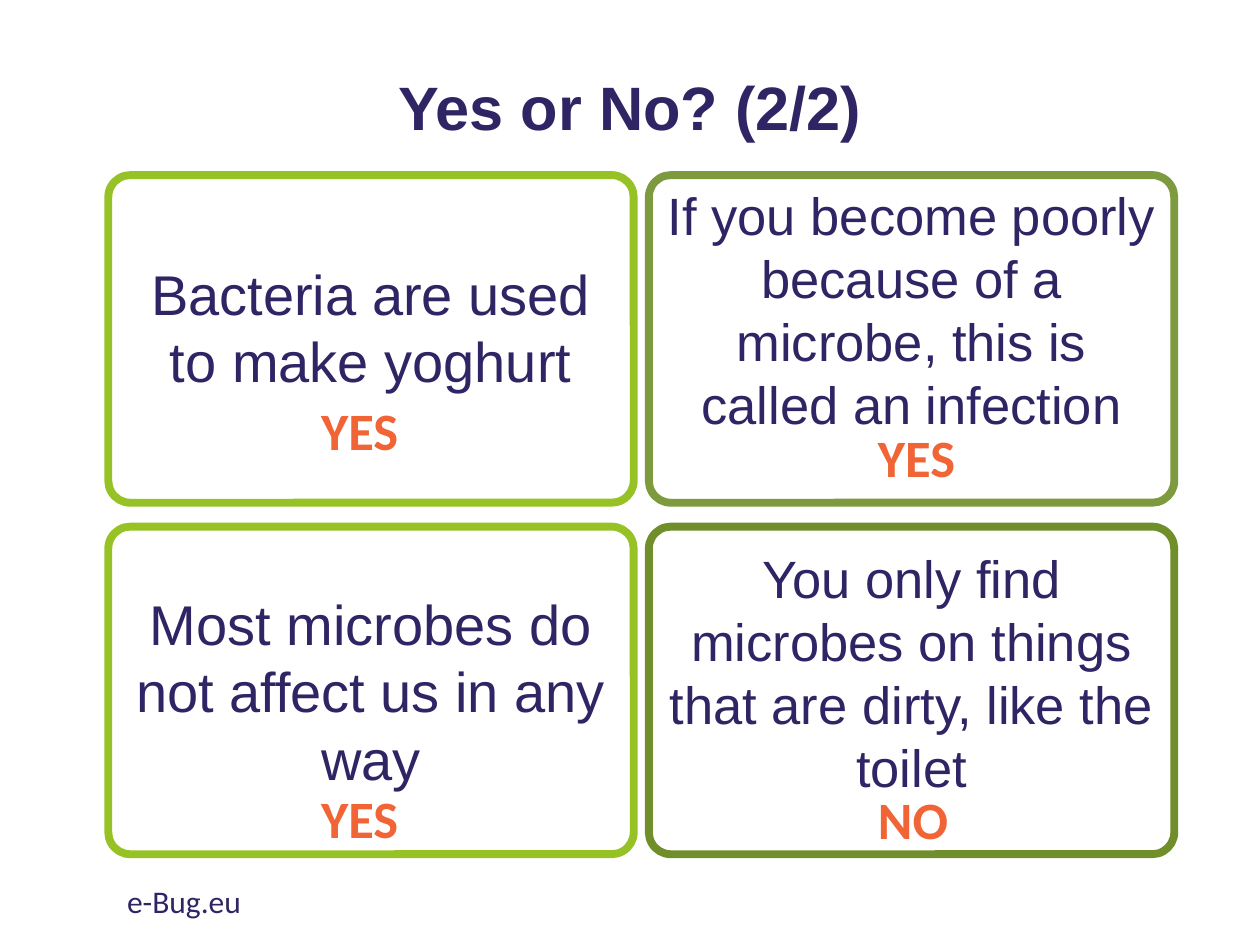
from pptx import Presentation
from pptx import util as u
from pptx.dml.color import RGBColor
from pptx.enum import shapes, text

NAVY = RGBColor(0x30, 0x25, 0x64)
ORANGE = RGBColor(0xF1, 0x64, 0x36)
LIME = RGBColor(0x96, 0xC2, 0x25)
OLIVE = RGBColor(0x7D, 0x9A, 0x3E)
MOSS = RGBColor(0x70, 0x8F, 0x2B)

TITLE = "Yes or No? (2/2)"
FOOTER = "e-Bug.eu"
# statement, size, outline, space kept free below it, answer, answer top
CARDS = [
    ("Bacteria are used to make yoghurt", 32, LIME, 0.19, "YES", 3.11),
    ("If you become poorly because of a microbe, this is called an infection",
     30, OLIVE, 0.48, "YES", 3.32),
    ("Most microbes do not affect us in any way", 32, LIME, 0, "YES", 6.19),
    ("You only find microbes on things that are dirty, like the toilet",
     30, MOSS, 0.29, "NO", 6.2),
]
COLUMNS = 2
CARD_W, CARD_H = 4.17, 2.6
GRID_LEFT, GRID_TOP = 0.86, 1.39
STEP_X, STEP_Y = 4.29, 2.79
ANSWER_LEFTS = (2.45, 6.87)


def inches(*lengths):
    return [u.Inches(n) for n in lengths]


def write(tf, words, size, color, font="Arial", bold=False, align=None):
    tf.word_wrap = True
    p = tf.paragraphs[0]
    p.alignment = align
    r = p.add_run()
    r.text = words
    r.font.name = font
    r.font.size = u.Pt(size)
    r.font.bold = bold
    r.font.color.rgb = color
    return p


def add_label(s, box, words, size, color, bold=False):
    tf = s.shapes.add_textbox(*inches(*box)).text_frame
    write(tf, words, size, color, "Calibri", bold)


def add_card(s, left, top, statement, size, outline, space_below):
    sp = s.shapes.add_shape(shapes.MSO_SHAPE.ROUNDED_RECTANGLE,
                            *inches(left, top, CARD_W, CARD_H))
    sp.adjustments[0] = 0.067
    sp.shadow.inherit = False
    sp.fill.background()
    sp.line.color.rgb = outline
    sp.line.width = u.Pt(4.5)
    tf = sp.text_frame
    tf.margin_left = tf.margin_right = u.Inches(0.08)
    tf.margin_top, tf.margin_bottom = inches(0, space_below)
    tf.vertical_anchor = text.MSO_ANCHOR.MIDDLE
    write(tf, statement, size, NAVY, align=text.PP_ALIGN.CENTER)


def main():
    prs = Presentation()
    prs.slide_width, prs.slide_height = inches(10, 7.5)
    s = prs.slides.add_slide(prs.slide_layouts[5])

    title = s.shapes.title
    title.left, title.top, title.width, title.height = inches(0.69, 0.15, 8.62, 1.45)
    title.text_frame.vertical_anchor = text.MSO_ANCHOR.MIDDLE
    p = write(title.text_frame, TITLE, 35, NAVY, bold=True,
              align=text.PP_ALIGN.CENTER)
    p.line_spacing = 0.9

    for i, (statement, size, outline, space_below, answer, answer_top) in enumerate(CARDS):
        row, col = divmod(i, COLUMNS)
        add_card(s, GRID_LEFT + col * STEP_X, GRID_TOP + row * STEP_Y,
                 statement, size, outline, space_below)
        add_label(s, (ANSWER_LEFTS[col], answer_top, 2.27, 0.61),
                  answer, 30, ORANGE, bold=True)

    add_label(s, (0.91, 6.95, 3.38, 0.4), FOOTER, 18, NAVY)
    prs.save("out.pptx")


if __name__ == "__main__":
    main()
